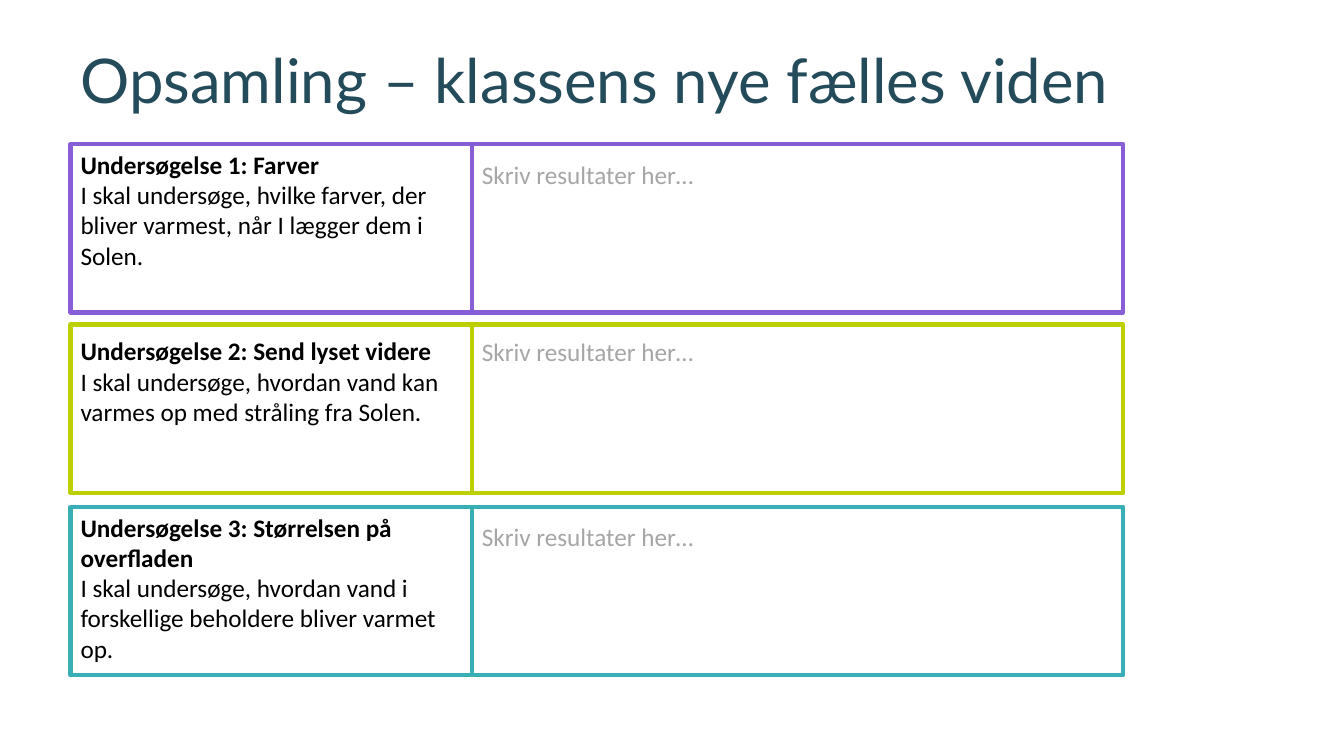
from dataclasses import dataclass
from pptx import Presentation
from pptx.dml.color import RGBColor
from pptx.enum.shapes import MSO_SHAPE
from pptx.util import Emu, Pt


@dataclass(frozen=True)
class Theme:
    title: str = "234B5A"
    text: str = "000000"
    hint: str = "A6A6A6"
    purple: str = "885ED7"
    lime: str = "BCCF00"
    teal: str = "37AFB5"
    head_font: str = "Lato"
    body_font: str = "Calibri"
    head_size: int = 44
    body_size: int = 18


theme = Theme()
PX = 9144  # 100 px to the inch


def px(*nums):
    return [Emu(n * PX) for n in nums]


def write(box, parts, color, font=theme.body_font, size=theme.body_size):
    """Write (words, bold) parts in one paragraph, a line break between them."""
    frame = slide.shapes.add_textbox(*px(*box)).text_frame
    frame.word_wrap = True
    para = frame.paragraphs[0]
    for i, (words, bold) in enumerate(parts):
        if i:
            para.add_line_break()
        run = para.add_run()
        run.text = words
        run.font.bold = bold
    para.font.name = font
    para.font.size = Pt(size)
    para.font.color.rgb = RGBColor.from_string(color)


deck = Presentation()
deck.slide_width, deck.slide_height = px(1333, 750)
slide = deck.slides.add_slide(deck.slide_layouts[6])

LEFT, MID, RIGHT = 70, 468, 1114
HIGH = 167

write((LEFT, 37, RIGHT - LEFT, 102),
      [("Opsamling – klassens nye fælles viden", False)],
      theme.title, theme.head_font, theme.head_size)

# frame top, task top, task width, task height, hint top, colour, heading, task
tasks = [
    (143, 143, 398, 131, 153, theme.purple, "Undersøgelse 1: Farver",
     "I skal undersøge, hvilke farver, der bliver varmest, "
     "når I lægger dem i Solen."),
    (322, 328, 415, 101, 329, theme.lime, "Undersøgelse 2: Send lyset videre",
     "I skal undersøge, hvordan vand kan varmes op med stråling fra Solen."),
    (503, 503, 398, 162, 512, theme.teal,
     "Undersøgelse 3: Størrelsen på overfladen",
     "I skal undersøge, hvordan vand i forskellige beholdere "
     "bliver varmet op."),
]

for top, task_top, wide, tall, hint_top, color, head, task in tasks:
    for x, end in ((LEFT, MID), (MID, RIGHT)):
        cell = slide.shapes.add_shape(MSO_SHAPE.RECTANGLE,
                                      *px(x, top, end - x, HIGH))
        cell.shadow.inherit = False
        cell.fill.background()
        cell.line.color.rgb = RGBColor.from_string(color)
        cell.line.width = Pt(3)
    write((LEFT, task_top, wide, tall), [(head, True), (task, False)],
          theme.text)
    write((MID, hint_top, 639, 40), [("Skriv resultater her…", False)],
          theme.hint)

deck.save("out.pptx")
